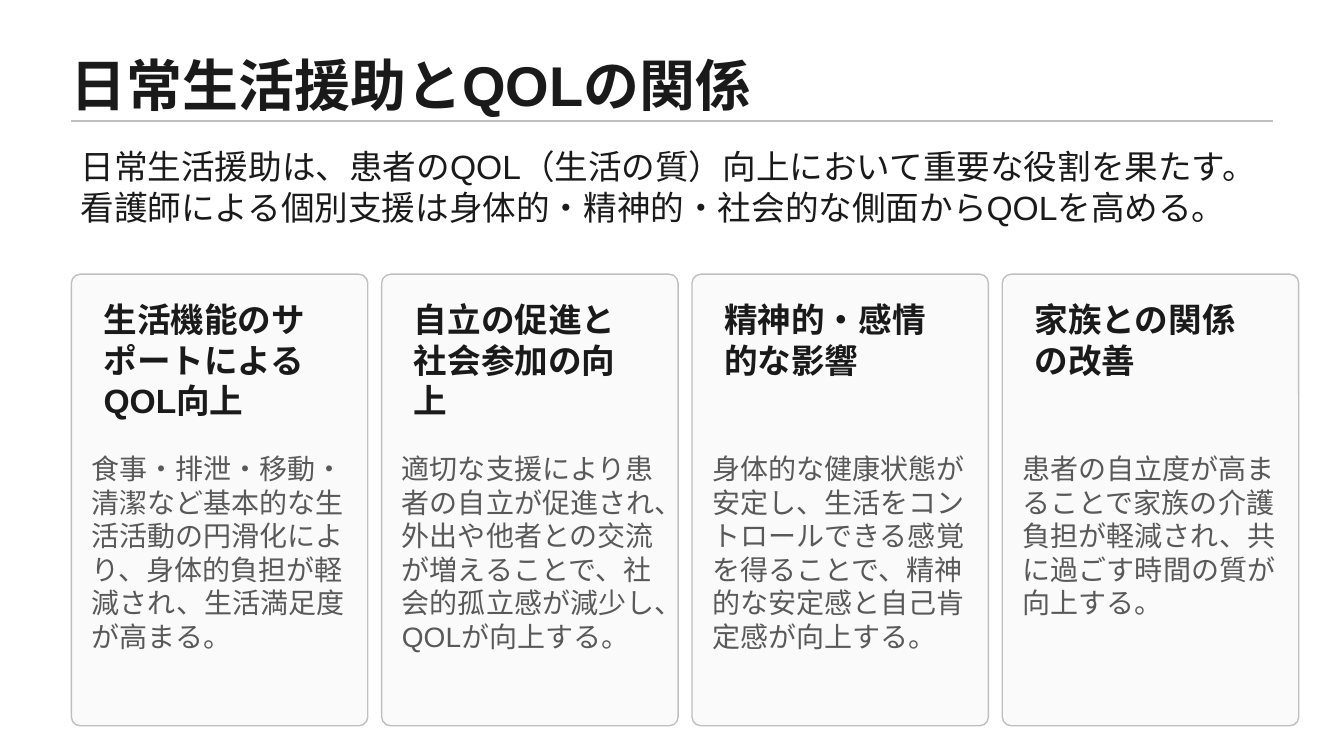
from lxml import etree
from pptx import Presentation
from pptx.dml.color import RGBColor
from pptx.enum.shapes import MSO_CONNECTOR, MSO_SHAPE
from pptx.enum.text import MSO_ANCHOR
from pptx.oxml.ns import qn
from pptx.util import Cm, Pt

ROUNDED = MSO_SHAPE.ROUNDED_RECTANGLE
STRAIGHT = MSO_CONNECTOR.STRAIGHT
TOP, MIDDLE = MSO_ANCHOR.TOP, MSO_ANCHOR.MIDDLE

# Content
TITLE = "日常生活援助とQOLの関係"
LEAD = ("日常生活援助は、患者のQOL（生活の質）向上において重要な役割を果たす。"
        "看護師による個別支援は身体的・精神的・社会的な側面からQOLを高める。")
CARDS = [
    ("生活機能のサポートによるQOL向上",
     "食事・排泄・移動・清潔など基本的な生活活動の円滑化により、"
     "身体的負担が軽減され、生活満足度が高まる。"),
    ("自立の促進と社会参加の向上",
     "適切な支援により患者の自立が促進され、外出や他者との交流が増えることで、"
     "社会的孤立感が減少し、QOLが向上する。"),
    ("精神的・感情的な影響",
     "身体的な健康状態が安定し、生活をコントロールできる感覚を得ることで、"
     "精神的な安定感と自己肯定感が向上する。"),
    ("家族との関係の改善",
     "患者の自立度が高まることで家族の介護負担が軽減され、"
     "共に過ごす時間の質が向上する。"),
]

# Style and layout (lengths in cm)
FONT = "Arial"
COLORS = {"ink": "1A1A1A", "body": "595959", "line": "BFBFBF",
          "card": "FAFAFA", "page": "FFFFFF"}
LEFT, WIDTH, RULE_Y = 1.78, 30.3, 3.05
CARD_X, CARD_Y, CARD_W, CARD_H = 1.8, 6.91, 7.47, 11.38
CARD_GAP = 0.35


def color(name):
    return RGBColor.from_string(COLORS[name])


def add_text(s, text, box, size, ink="ink", bold=False, anchor=TOP):
    sp = s.shapes.add_textbox(*map(Cm, box))
    tf = sp.text_frame
    tf.word_wrap = True
    tf.vertical_anchor = anchor
    tf.text = text
    font = tf.paragraphs[0].runs[0].font
    font.name, font.size, font.bold = FONT, Pt(size), bold
    font.color.rgb = color(ink)
    return tf


def add_card(s, x, heading, body):
    sp = s.shapes.add_shape(ROUNDED, Cm(x), Cm(CARD_Y), Cm(CARD_W), Cm(CARD_H))
    sp.adjustments[0] = 0.03
    sp.shadow.inherit = False
    sp.fill.solid()
    sp.fill.fore_color.rgb = color("card")
    sp.line.color.rgb = color("line")
    sp.line.width = Pt(1)
    add_text(s, heading, (x + 0.56, CARD_Y + 0.51, 6.25, 3.05), 24, bold=True)
    add_text(s, body, (x + 0.26, CARD_Y + 4.34, 6.91, 6.83), 20, "body")


def main():
    prs = Presentation()
    prs.slide_width, prs.slide_height = Cm(33.87), Cm(19.05)
    s = prs.slides.add_slide(prs.slide_layouts[6])
    s.background.fill.solid()
    s.background.fill.fore_color.rgb = color("page")

    # Title and rule
    tf = add_text(s, TITLE, (LEFT, 1.07, WIDTH, 2.08), 40, bold=True, anchor=MIDDLE)
    tf.margin_left = tf.margin_right = tf.margin_top = tf.margin_bottom = 0
    rule = s.shapes.add_connector(STRAIGHT, Cm(LEFT), Cm(RULE_Y),
                                  Cm(LEFT + WIDTH), Cm(RULE_Y))
    rule.line.color.rgb = color("line")
    rule.line.width = Pt(1)
    etree.SubElement(rule._element.spPr, qn("a:effectLst"))

    # Lead text
    add_text(s, LEAD, (LEFT, 3.56, WIDTH, 1.9), 24)

    # Row of cards
    for i, (heading, body) in enumerate(CARDS):
        add_card(s, CARD_X + i * (CARD_W + CARD_GAP), heading, body)

    prs.save("out.pptx")


if __name__ == "__main__":
    main()
